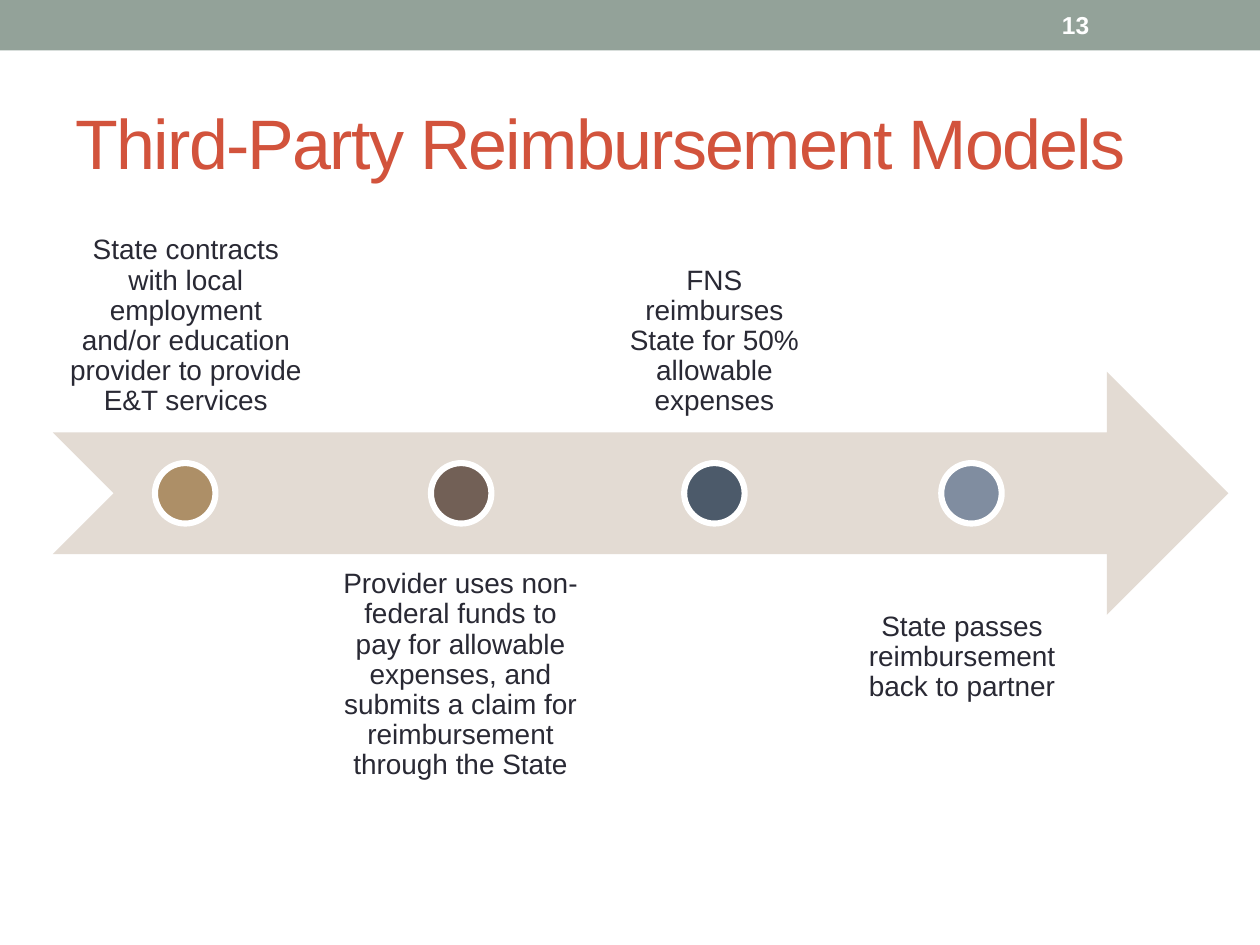
from pptx import Presentation
from pptx import util as u
from pptx.dml.color import RGBColor
from pptx.enum import shapes, text

COLORS = {
    "band": "93A299", "title": "D2533C", "text": "292934", "white": "FFFFFF",
    "arrow": "E3DBD3", "tan": "AD8F67", "brown": "726056",
    "navy": "4C5A6A", "blue": "808DA0",
}
ARROW_TOP, ARROW_HEIGHT, DOT = 2.95, 1.93, 0.48
ABOVE, BELOW = 1.5, 4.4
INSET = 0.12
STEPS = [
    ("State contracts with local employment and/or education provider to provide E&T services",
     0.42, 2.11, 1.47, "tan", INSET),
    ("Provider uses non-federal funds to pay for allowable expenses, and submits a claim for "
     "reimbursement through the State", 2.57, 2.17, 3.66, "brown", INSET),
    ("FNS reimburses State for 50% allowable expenses", 4.79, 1.76, 5.67, "navy", INSET),
    ("State passes reimbursement back to partner", 6.53, 2.21, 7.71, "blue", 0.46),
]


class Deck:
    """Holds the style and the current slide, and draws each kind of element."""

    font = "Arial"

    def __init__(self, prs):
        self.s = prs.slides.add_slide(prs.slide_layouts[5])

    def place(self, sp, box):
        sp.left, sp.top, sp.width, sp.height = map(u.Inches, box)

    def set_text(self, tf, content, size, color, anchor, align, bold=False):
        tf.text = content
        tf.word_wrap = True
        tf.auto_size = text.MSO_AUTO_SIZE.NONE
        tf.vertical_anchor = anchor
        p = tf.paragraphs[0]
        p.alignment = align
        r = p.runs[0]
        r.font.name, r.font.size, r.font.bold = self.font, u.Pt(size), bold
        r.font.color.rgb = RGBColor.from_string(COLORS[color])
        return p

    def title(self, content, box):
        sp = self.s.shapes.title
        self.place(sp, box)
        p = self.set_text(sp.text_frame, content, 40, "title",
                          text.MSO_ANCHOR.MIDDLE, text.PP_ALIGN.LEFT)
        p.runs[0].font._element.set("spc", "-100")

    def label(self, content, box, size, color, anchor, align, bold=False):
        tf = self.s.shapes.add_textbox(*map(u.Inches, box)).text_frame
        return tf, self.set_text(tf, content, size, color, anchor, align, bold)

    def caption(self, content, box, anchor, top_inset):
        tf, p = self.label(content, box, 16, "text", anchor, text.PP_ALIGN.CENTER)
        tf.margin_left = tf.margin_right = tf.margin_bottom = u.Inches(INSET)
        tf.margin_top = u.Inches(top_inset)
        p.line_spacing = 0.9

    def shape(self, kind, box, fill, line=None):
        sp = self.s.shapes.add_shape(kind, *map(u.Inches, box))
        sp.shadow.inherit = False
        sp.fill.solid()
        sp.fill.fore_color.rgb = RGBColor.from_string(COLORS[fill])
        if line:
            sp.line.color.rgb = RGBColor.from_string(COLORS[line])
            sp.line.width = u.Pt(3.5)
        else:
            sp.line.fill.background()


def main():
    prs = Presentation()
    prs.slide_width, prs.slide_height = u.Inches(10), u.Inches(7.5)
    deck = Deck(prs)
    kinds = shapes.MSO_SHAPE
    deck.shape(kinds.RECTANGLE, (0, 0, 10, 0.4), "band")
    deck.title("Third-Party Reimbursement Models", (0.5, 0.58, 9, 1.08))
    deck.label("13", (8.33, 0.02, 1.17, 0.36), 14, "white",
               text.MSO_ANCHOR.MIDDLE, text.PP_ALIGN.LEFT, bold=True)
    deck.shape(kinds.NOTCHED_RIGHT_ARROW, (0.42, ARROW_TOP, 9.33, ARROW_HEIGHT), "arrow")
    dot_top = ARROW_TOP + (ARROW_HEIGHT - DOT) / 2
    for i, (content, left, width, center, color, top_inset) in enumerate(STEPS):
        top, anchor = ((BELOW, text.MSO_ANCHOR.TOP) if i % 2
                       else (ABOVE, text.MSO_ANCHOR.BOTTOM))
        deck.caption(content, (left, top, width, ARROW_HEIGHT), anchor, top_inset)
        deck.shape(kinds.OVAL, (center - DOT / 2, dot_top, DOT, DOT), color, "white")
    prs.save("out.pptx")


if __name__ == "__main__":
    main()
